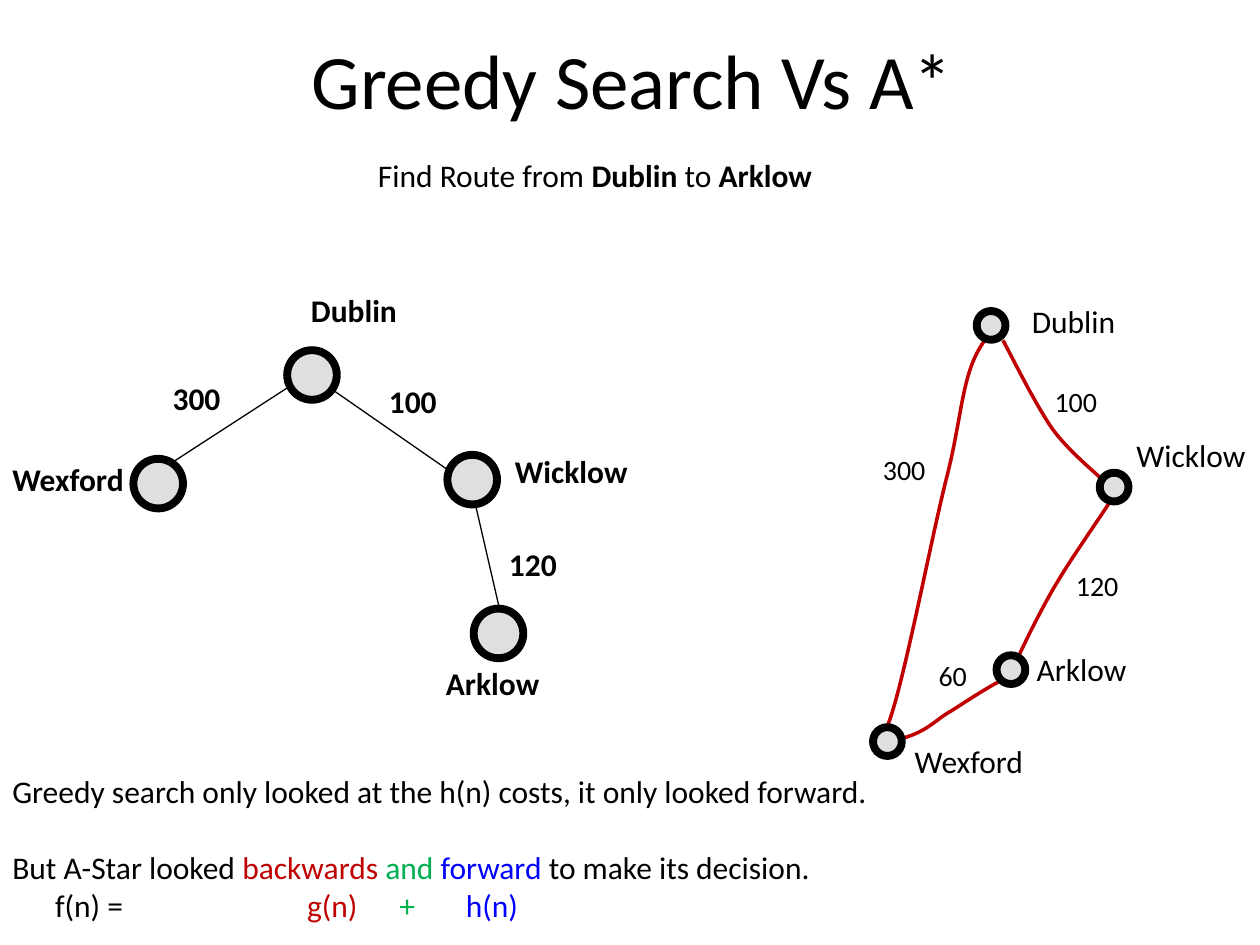
"""Build a slide comparing greedy search with A* on a small route map."""
from lxml.etree import SubElement
from pptx import Presentation
from pptx.dml.color import RGBColor
from pptx.enum.shapes import MSO_CONNECTOR, MSO_SHAPE
from pptx.enum.text import MSO_ANCHOR, PP_ALIGN
from pptx.oxml.ns import qn
from pptx.util import Cm, Pt

FONT = "Calibri"
BLACK, RED, GREEN, BLUE, GREY = "000000", "C00000", "00B050", "0000FF", "C0C0C0"

TITLE = "Greedy Search Vs A*"
TASK = [("Find Route from ", BLACK, False), ("Dublin", BLACK, True),
        (" to ", BLACK, False), ("Arklow", BLACK, True)]
GREEDY = [("Greedy search only looked at the h(n) costs, it only looked forward.", BLACK, False)]
A_STAR = [("But A-Star looked ", BLACK, False), ("backwards ", RED, False),
          ("and ", GREEN, False), ("forward", BLUE, False),
          (" to make its decision.", BLACK, False)]
FORMULA = [("\tf(n) =", BLACK, False), ("\tg(n)", RED, False),
           ("\t+", GREEN, False), ("\th(n)", BLUE, False)]
FORMULA_TABS = [0.86, 5.94, 7.8, 9.14]

TREE = {
    "node_size": 1, "bold": True, "cost_size": 18,
    "nodes": [(5.79, 7.06), (9.02, 9.17), (2.69, 9.25), (9.55, 12.27)],
    "names": [("Dublin", 6.02, 5.74, 2.26), ("Wexford", 0, 9.14, 2.77),
              ("Wicklow", 10.13, 8.99, 2.79), ("Arklow", 8.74, 13.26, 2.41)],
    "costs": [("300", 3.23, 7.52, 1.5), ("100", 7.59, 7.57, 1.5), ("120", 10.01, 10.87, 1.5)],
}
TREE_EDGES = [(5.82, 7.8, 3.4, 9.37), (6.65, 7.82, 9.07, 9.5), (9.6, 10.24, 10.08, 12.32)]

ROAD_MAP = {
    "node_size": 0.58, "bold": False, "cost_size": 16,
    "nodes": [(19.69, 6.27), (22.17, 9.53), (20.09, 13.21), (17.6, 14.66)],
    "names": [("Dublin", 20.55, 5.97, 2.21), ("Wicklow", 22.66, 8.66, 2.74),
              ("Arklow", 20.65, 12.98, 2.34), ("Wexford", 18.19, 14.83, 2.72)],
    "costs": [("300", 17.55, 8.99, 1.37), ("100", 21.01, 7.62, 1.37),
              ("120", 21.44, 11.33, 1.37), ("60", 18.67, 13.16, 1.09)],
}
ROADS = [
    [(19.84, 6.88), (19.38, 7.52), (19.41, 8.36), (19.08, 9.65),
     (18.75, 10.95), (18.19, 13.94), (17.88, 14.66)],
    [(20.22, 6.86), (20.55, 7.49), (20.88, 8.15), (21.21, 8.64),
     (21.54, 9.09), (22.05, 9.5), (22.2, 9.65)],
    [(22.4, 10.08), (22.05, 10.62), (21.67, 11.15), (21.36, 11.66),
     (21.03, 12.19), (20.65, 12.98), (20.52, 13.26)],
    [(20.14, 13.74), (19.81, 13.92), (19.51, 14.12), (19.18, 14.33),
     (18.87, 14.5), (18.72, 14.73), (18.21, 14.88)],
]


def paint(color_format, color):
    color_format.rgb = RGBColor.from_string(color)


def set_line(shape, color, width):
    paint(shape.line.color, color)
    shape.line.width = Pt(width)


def write(paragraph, runs, size):
    paragraph.font.size = Pt(size)
    paragraph.font.name = FONT
    for text, color, bold in runs:
        run = paragraph.add_run()
        run.text = text
        run.font.bold = bold
        paint(run.font.color, color)


def add_text(slide, box, paragraphs, size=18, wrap=False):
    frame = slide.shapes.add_textbox(*map(Cm, box)).text_frame
    frame.word_wrap = wrap
    for index, runs in enumerate(paragraphs):
        write(frame.add_paragraph() if index else frame.paragraphs[0], runs, size)
    return frame


def add_tabs(paragraph, positions):
    tabs = SubElement(paragraph._p.get_or_add_pPr(), qn("a:tabLst"))
    paragraph._p.pPr.insert(0, tabs)
    for position in positions:
        SubElement(tabs, qn("a:tab"), pos=str(Cm(position)), algn="l")


def add_node(slide, left, top, size):
    node = slide.shapes.add_shape(MSO_SHAPE.OVAL, Cm(left), Cm(top), Cm(size), Cm(size))
    node.shadow.inherit = False
    node.fill.solid()
    paint(node.fill.fore_color, GREY)
    fill_color = node._element.spPr.find(qn("a:solidFill"))[0]
    SubElement(fill_color, qn("a:alpha"), val="50000")
    set_line(node, BLACK, 4.5)


def add_edge(slide, ends):
    edge = slide.shapes.add_connector(MSO_CONNECTOR.STRAIGHT, *map(Cm, ends))
    set_line(edge, BLACK, 0.75)
    SubElement(edge._element.spPr, qn("a:effectLst"))


def add_road(slide, points):
    """Draw a curve whose points are a start followed by Bezier triples."""
    start, *rest = [(Cm(x), Cm(y)) for x, y in points]
    builder = slide.shapes.build_freeform(*start)
    builder.add_line_segments(rest, close=False)
    road = builder.convert_to_shape()
    steps = list(road._element.iter(qn("a:lnTo")))
    outline = steps[0].getparent()
    for index in range(0, len(steps), 3):
        curve = SubElement(outline, qn("a:cubicBezTo"))
        for step in steps[index:index + 3]:
            curve.append(step[0])
            outline.remove(step)
    road.shadow.inherit = False
    road.fill.background()
    set_line(road, RED, 2)


def add_graph(slide, graph):
    for left, top in graph["nodes"]:
        add_node(slide, left, top, graph["node_size"])
    for labels, size in ((graph["names"], 18), (graph["costs"], graph["cost_size"])):
        for text, left, top, width in labels:
            add_text(slide, (left, top, width, 1), [[(text, BLACK, graph["bold"])]], size)


def main():
    presentation = Presentation()
    presentation.slide_width, presentation.slide_height = Cm(25.4), Cm(19.05)
    slide = presentation.slides.add_slide(presentation.slide_layouts[5])

    title = slide.shapes.title
    title.left, title.top, title.width, title.height = map(Cm, (1.32, 0, 22.86, 3.18))
    title.text_frame.vertical_anchor = MSO_ANCHOR.MIDDLE
    heading = title.text_frame.paragraphs[0]
    heading.alignment = PP_ALIGN.CENTER
    write(heading, [(TITLE, BLACK, False)], 44)

    add_text(slide, (7.37, 3.02, 9.45, 1.02), [TASK])
    for ends in TREE_EDGES:
        add_edge(slide, ends)
    add_graph(slide, TREE)
    for points in ROADS:
        add_road(slide, points)
    add_graph(slide, ROAD_MAP)

    frame = add_text(slide, (0, 15.44, 19.13, 3.33), [GREEDY, A_STAR, FORMULA], wrap=True)
    frame.paragraphs[1].space_before = Pt(22)
    add_tabs(frame.paragraphs[2], FORMULA_TABS)
    presentation.save("out.pptx")


if __name__ == "__main__":
    main()
